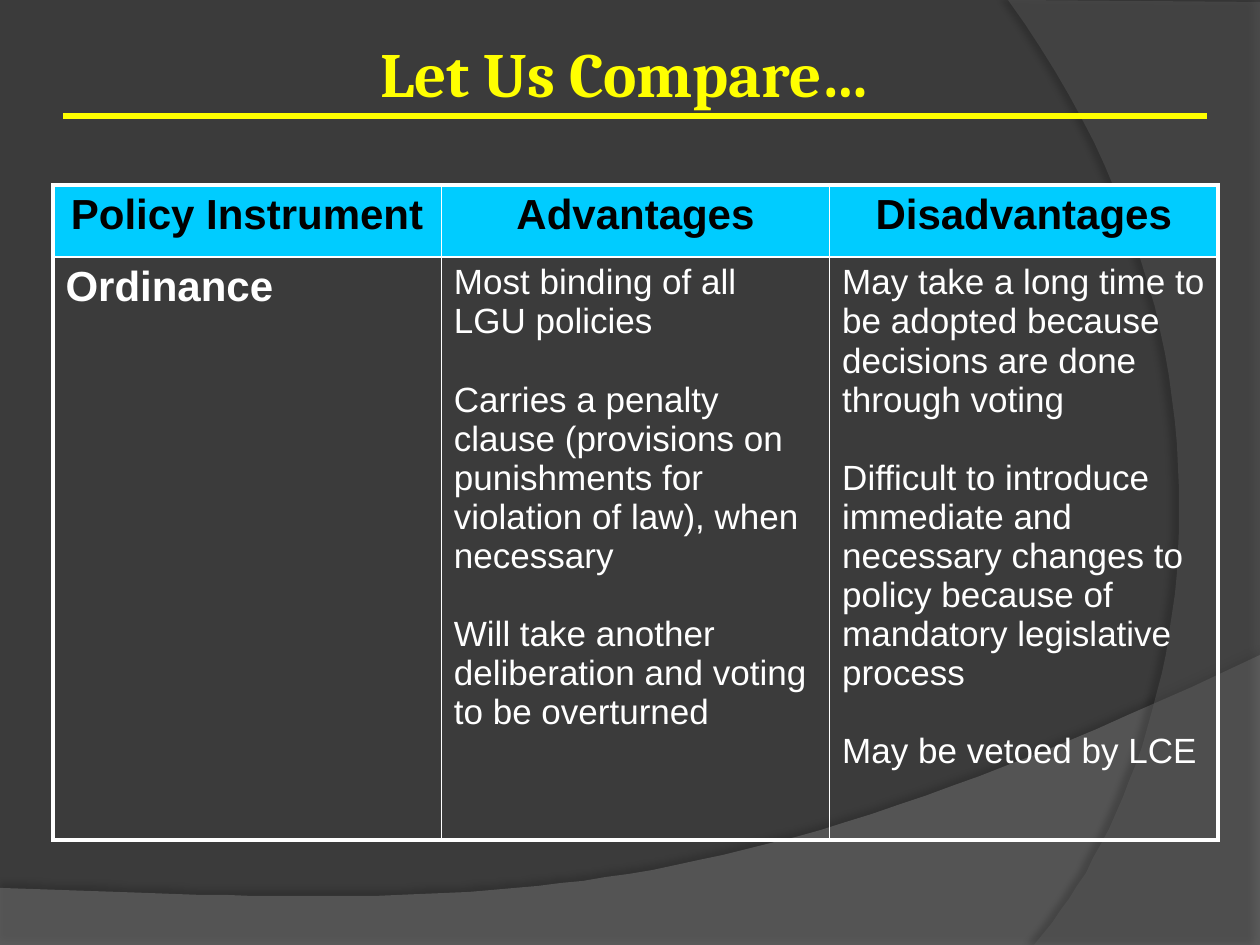
from lxml.etree import SubElement
from pptx import Presentation
from pptx.dml.color import RGBColor
from pptx.enum.shapes import MSO_CONNECTOR
from pptx.enum.text import MSO_ANCHOR, PP_ALIGN
from pptx.oxml import parse_xml
from pptx.oxml.ns import nsdecls, qn
from pptx.util import Emu, Pt

PX = 914400 / 126
COLORS = {
    "bg": "3B3B3B", "wave": "7F7F7F", "arc": "5E5E5E", "accent": "FFFF00",
    "header": "00CCFF", "dark": "000000", "light": "FFFFFF",
}
TITLE = {"name": "Cambria", "size": Pt(36), "bold": True}
HEADING = {"name": "Arial", "size": Pt(24), "bold": True}
BODY = {"name": "Arial", "size": Pt(20), "bold": False}
HEADERS = ["Policy Instrument", "Advantages", "Disadvantages"]
ORDINANCE = [
    ["Ordinance"],
    ["Most binding of all LGU policies",
     "Carries a penalty clause (provisions on punishments for violation of law), when necessary",
     "Will take another deliberation and voting to be overturned"],
    ["May take a long time to be adopted because decisions are done through voting",
     "Difficult to introduce immediate and necessary changes to policy because of "
     "mandatory legislative process",
     "May be vetoed by LCE"],
]


def px(n):
    return Emu(round(n * PX))


def rgb(name):
    return RGBColor.from_string(COLORS[name])


def write(tf, texts, fmt, color, align=PP_ALIGN.LEFT, gap=0):
    tf.word_wrap = True
    for i, text in enumerate(texts):
        p = tf.add_paragraph() if i else tf.paragraphs[0]
        p.alignment = align
        p.space_before = Pt(gap if i else 0)
        r = p.add_run()
        r.text = text
        for key, value in fmt.items():
            setattr(r.font, key, value)
        r.font.color.rgb = rgb(color)


def bezier(points, steps=48):
    a, b, c, d = points
    for i in range(steps + 1):
        t = i / steps
        u = 1 - t
        yield tuple(round(u**3 * a[k] + 3 * u * u * t * b[k] + 3 * u * t * t * c[k] + t**3 * d[k], 2)
                    for k in (0, 1))


def add_swoosh(s, box, corners, curve, color, alpha, shadow):
    left, top = box
    points = [(left + x, top + y) for x, y in corners + list(bezier(curve))]
    builder = s.shapes.build_freeform(*points[0], scale=PX)
    builder.add_line_segments(points[1:], close=True)
    sp = builder.convert_to_shape()
    sp.line.fill.background()
    sp.fill.solid()
    sp.fill.fore_color.rgb = rgb(color)
    srgb = sp.fill._xPr.find(qn("a:solidFill"))[0]
    SubElement(srgb, qn("a:alpha"), val=str(alpha * 1000))
    opacity, blur, dist, angle = shadow
    sp._element.spPr.append(parse_xml(
        f'<a:effectLst {nsdecls("a")}><a:outerShdw blurRad="{Pt(blur)}" dist="{Pt(dist)}" '
        f'dir="{angle * 60000}" rotWithShape="0"><a:srgbClr val="{COLORS["dark"]}">'
        f'<a:alpha val="{opacity * 1000}"/></a:srgbClr></a:outerShdw></a:effectLst>'))


def add_background(s):
    s.background.fill.solid()
    s.background.fill.fore_color.rgb = rgb("bg")
    add_swoosh(s, (0, 655), [(0, 291), (1260, 291)],
               [(1260, 0), (704, 264), (493, 251), (0, 233)], "wave", 45, (35, 4, 3.5, 270))
    add_swoosh(s, (1008, 0), [(252, 2), (252, 945)],
               [(26, 945), (170, 780), (275, 378), (0, 0)], "arc", 40, (45, 4, 4, 180))


def add_title(s, left, top, width, height):
    tf = s.shapes.add_textbox(*map(px, (left, top, width, height))).text_frame
    tf.vertical_anchor = MSO_ANCHOR.BOTTOM
    write(tf, ["Let Us Compare…"], TITLE, "accent", PP_ALIGN.CENTER)


def add_rule(s, left, top, width):
    line = s.shapes.add_connector(MSO_CONNECTOR.STRAIGHT, *map(px, (left, top, left + width, top)))
    line.line.color.rgb = rgb("accent")
    line.line.width = Pt(3)
    SubElement(line._element.spPr, qn("a:effectLst"))


def set_borders(cell, widths):
    tcPr = cell._tc.get_or_add_tcPr()
    for i, (side, width) in enumerate(widths.items()):
        tcPr.insert(i, parse_xml(
            f'<a:ln{side} {nsdecls("a")} w="{Pt(width)}"><a:solidFill>'
            f'<a:srgbClr val="{COLORS["light"]}"/></a:solidFill></a:ln{side}>'))


def add_comparison(s, left, top, width, height):
    header_height = 72
    table = s.shapes.add_table(2, 3, *map(px, (left, top, width, height))).table
    table.first_row = table.horz_banding = False
    table.rows[0].height = px(header_height)
    table.rows[1].height = px(height - header_height)
    for col in range(3):
        table.columns[col].width = px(width / 3)
        head, body = table.cell(0, col), table.cell(1, col)
        head.fill.solid()
        head.fill.fore_color.rgb = rgb("header")
        body.fill.background()
        write(head.text_frame, [HEADERS[col]], HEADING, "dark", PP_ALIGN.CENTER)
        write(body.text_frame, ORDINANCE[col], BODY if col else HEADING, "light", gap=22.4)
        for row, cell in enumerate((head, body)):
            outer = {"L": col == 0, "R": col == 2, "T": row == 0, "B": row == 1}
            set_borders(cell, {side: 2.25 if edge else 1 for side, edge in outer.items()})


def main():
    prs = Presentation()
    prs.slide_width, prs.slide_height = px(1260), px(945)
    s = prs.slides.add_slide(prs.slide_layouts[6])
    add_background(s)
    add_title(s, 105, 26, 1040, 90)
    add_comparison(s, 53, 185, 1165, 655)
    add_rule(s, 63, 116, 1144)
    prs.save("out.pptx")


if __name__ == "__main__":
    main()
